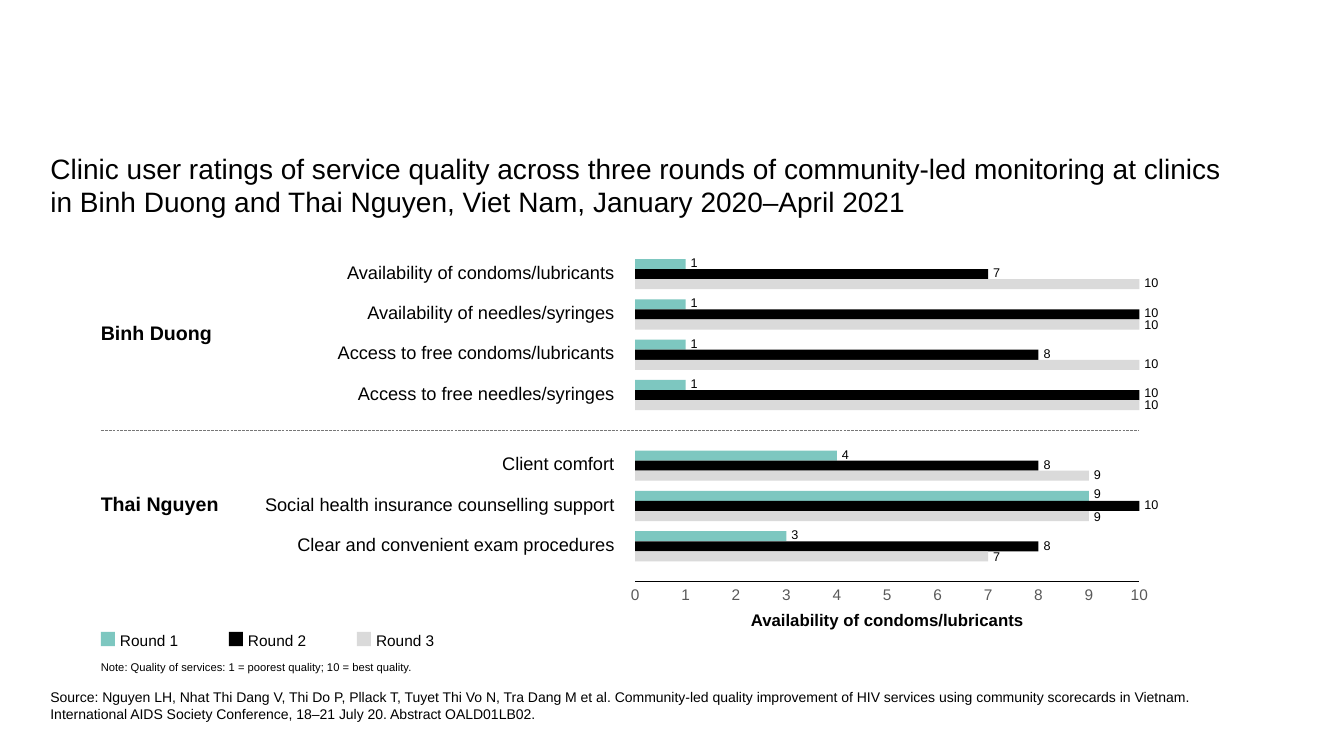
from lxml import etree
from pptx import Presentation
from pptx.dml.color import RGBColor
from pptx.enum.dml import MSO_LINE
from pptx.enum.shapes import MSO_CONNECTOR, MSO_SHAPE
from pptx.enum.text import PP_ALIGN
from pptx.oxml.ns import qn
from pptx.util import Inches, Pt

LEFT, CENTER, RIGHT = PP_ALIGN.LEFT, PP_ALIGN.CENTER, PP_ALIGN.RIGHT
RECTANGLE = MSO_SHAPE.RECTANGLE
STRAIGHT = MSO_CONNECTOR.STRAIGHT
LONG_DASH = MSO_LINE.LONG_DASH
FONT = "Arial"
BLACK, TICK_GREY, DIVIDER_GREY = "000000", "595959", "777777"
ROUND_COLORS = ["7DC7C0", "000000", "DADADA"]

# Chart geometry in inches
MARGIN = 1
AXIS_LEFT, AXIS_RIGHT, AXIS_TOP = 6.3, 11.3, 5.77
UNIT = 0.5
BAR_HEIGHT = 0.1
ROW_PITCH = 0.4

# Province, top of its name, top of its first bar, ratings for rounds 1 to 3
PROVINCES = [
    ("Binh Duong", 3.18, 2.57, [
        ("Availability of condoms/lubricants", [1, 7, 10]),
        ("Availability of needles/syringes", [1, 10, 10]),
        ("Access to free condoms/lubricants", [1, 8, 10]),
        ("Access to free needles/syringes", [1, 10, 10]),
    ]),
    ("Thai Nguyen", 4.88, 4.47, [
        ("Client comfort", [4, 8, 9]),
        ("Social health insurance counselling support", [9, 10, 9]),
        ("Clear and convenient exam procedures", [3, 8, 7]),
    ]),
]
# Small vertical shifts that keep neighbouring values apart
VALUE_SHIFTS = {
    "Availability of needles/syringes": [0, -0.01, 0.01],
    "Access to free needles/syringes": [0, -0.01, 0.01],
    "Social health insurance counselling support": [-0.01, 0, 0.02],
    "Clear and convenient exam procedures": [0, 0.01, 0.02],
}

presentation = Presentation()
presentation.slide_width = Inches(13.33)
presentation.slide_height = Inches(7.5)
slide = presentation.slides.add_slide(presentation.slide_layouts[6])


def add_text(lines, left, top, width, height, size, color=BLACK,
             bold=False, align=LEFT, spacing=None):
    box = slide.shapes.add_textbox(Inches(left), Inches(top),
                                   Inches(width), Inches(height))
    frame = box.text_frame
    frame.word_wrap = True
    frame.margin_left = frame.margin_right = 0
    frame.margin_top = frame.margin_bottom = 0
    for number, line in enumerate(lines):
        paragraph = frame.add_paragraph() if number else frame.paragraphs[0]
        paragraph.alignment = align
        if spacing:
            paragraph.line_spacing = Pt(spacing)
        run = paragraph.add_run()
        run.text = line
        run.font.name = FONT
        run.font.size = Pt(size)
        run.font.bold = bold
        run.font.color.rgb = RGBColor.from_string(color)


def add_bar(left, top, width, height, color):
    bar = slide.shapes.add_shape(RECTANGLE, Inches(left), Inches(top),
                                 Inches(width), Inches(height))
    bar.shadow.inherit = False
    bar.fill.solid()
    bar.fill.fore_color.rgb = RGBColor.from_string(color)
    bar.line.fill.background()


# Title and source
add_text(["Clinic user ratings of service quality across three rounds of "
          "community-led monitoring at clinics",
          "in Binh Duong and Thai Nguyen, Viet Nam, January 2020–April 2021"],
         0.5, 1.5, 12.5, 0.7, 20)
add_text(["Source: Nguyen LH, Nhat Thi Dang V, Thi Do P, Pllack T, Tuyet Thi Vo N, "
          "Tra Dang M et al. Community-led quality improvement of HIV services "
          "using community scorecards in Vietnam.",
          "International AIDS Society Conference, 18–21 July 20. Abstract OALD01LB02."],
         0.5, 6.83, 12.37, 0.34, 10)

# Divider between the provinces, and the value axis
for line_left, line_top, line_color, dash in [
        (MARGIN, 4.27, DIVIDER_GREY, LONG_DASH),
        (AXIS_LEFT, AXIS_TOP, BLACK, None)]:
    line = slide.shapes.add_connector(STRAIGHT, Inches(line_left), Inches(line_top),
                                      Inches(AXIS_RIGHT), Inches(line_top))
    line.line.color.rgb = RGBColor.from_string(line_color)
    line.line.width = Pt(0.25)
    if dash:
        line.line.dash_style = dash
    etree.SubElement(line._element.spPr, qn("a:effectLst"))

# Bars with province names, category labels and values
for province, name_top, first_top, categories in PROVINCES:
    add_text([province], MARGIN, name_top, 1.3, 0.24, 14, bold=True)
    for row, (category, ratings) in enumerate(categories):
        row_top = first_top + row * ROW_PITCH
        add_text([category], 2.4, row_top + 0.02, 3.69, 0.22, 13, align=RIGHT)
        shifts = VALUE_SHIFTS.get(category, [0, 0, 0])
        for number, (rating, color, shift) in enumerate(
                zip(ratings, ROUND_COLORS, shifts)):
            bar_top = row_top + number * BAR_HEIGHT
            length = rating * UNIT
            add_bar(AXIS_LEFT, bar_top, length, BAR_HEIGHT, color)
            add_text([str(rating)], AXIS_LEFT + length + 0.05,
                     bar_top - 0.04 + shift, 0.2, 0.15, 9)

# Axis numbers and axis title
for tick in range(11):
    add_text([str(tick)], AXIS_LEFT + tick * UNIT - 0.1, 5.84, 0.2, 0.15, 11,
             color=TICK_GREY, align=CENTER, spacing=11)
add_text(["Availability of condoms/lubricants"], AXIS_LEFT, 6.05,
         AXIS_RIGHT - AXIS_LEFT, 0.2, 12, bold=True, align=CENTER)

# Legend and note
for number, color in enumerate(ROUND_COLORS):
    key_left = MARGIN + number * 1.27
    add_bar(key_left, 6.27, 0.14, 0.14, color)
    add_text([f"Round {number + 1}"], key_left + 0.19, 6.25, 0.7, 0.18, 11, spacing=14)
add_text(["Note: Quality of services: 1 = poorest quality; 10 = best quality."],
         MARGIN, 6.55, 3.3, 0.13, 8)

presentation.save("out.pptx")
